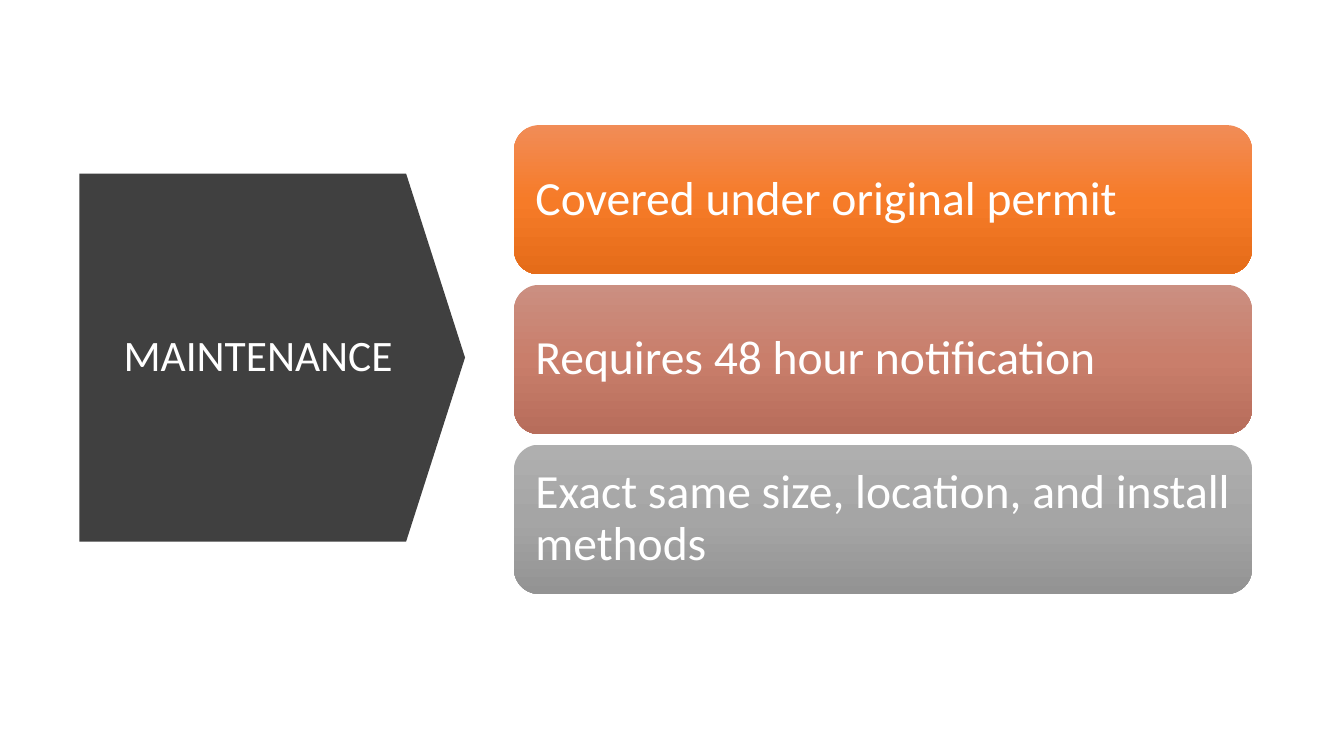
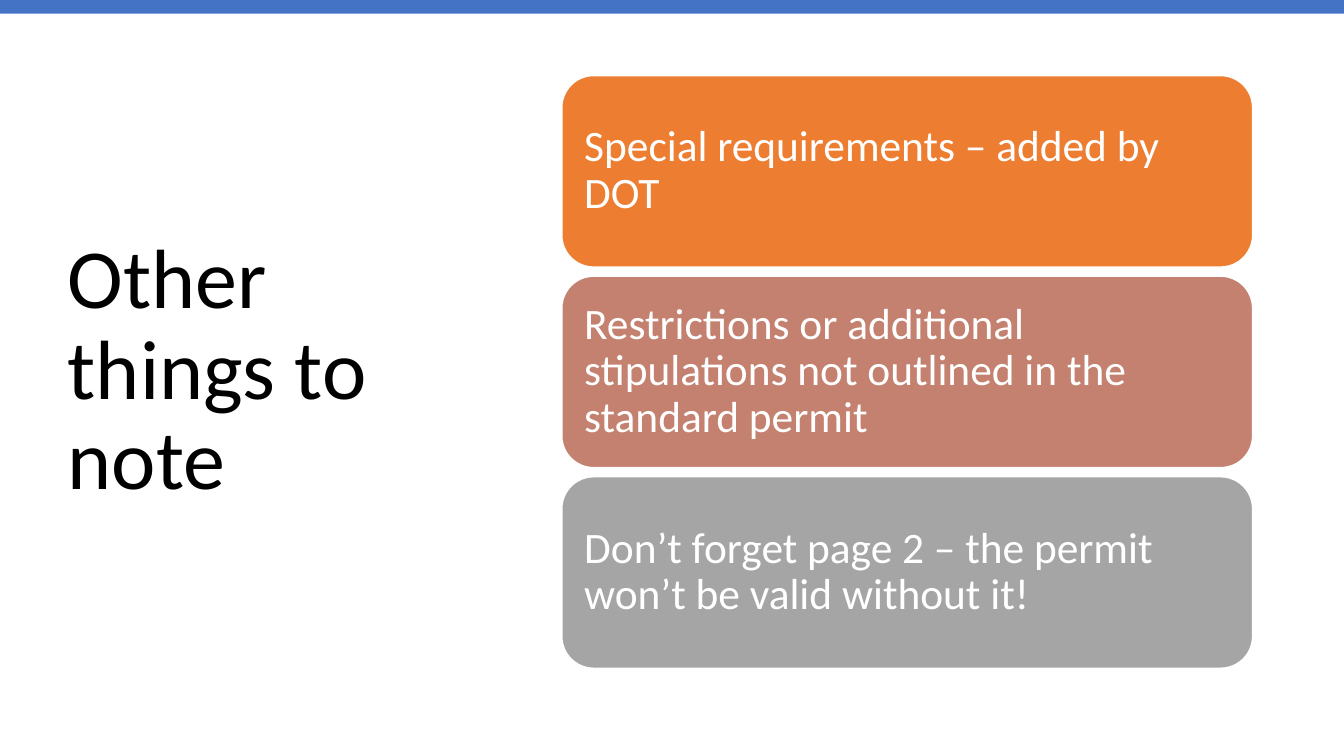
from lxml.etree import SubElement
from pptx import Presentation
from pptx.dml.color import RGBColor
from pptx.enum.shapes import MSO_SHAPE as Preset
from pptx.enum.text import MSO_ANCHOR as Anchor, MSO_AUTO_SIZE as AutoSize, PP_ALIGN as Align
from pptx.oxml.ns import qn
from pptx.util import Inches, Pt

TITLE_ONLY = 5


def color(value):
    return RGBColor.from_string(value)


class Deck:
    font = "Calibri"
    white = "FFFFFF"
    black = "000000"
    dark = "404040"
    blue = "4472C4"
    solid_fills = ["ED7D31", "C48170", "A5A5A5"]
    gradient_fills = [
        ["F18C57", "F67B28", "E56C19"],
        ["CB8F81", "C97E6B", "B76D5B"],
        ["AFAFAF", "A5A5A5", "939393"],
    ]

    def __init__(self):
        self.presentation = Presentation()
        self.presentation.slide_width = Inches(13.33)
        self.presentation.slide_height = Inches(7.5)
        self.slide = None

    def new_slide(self):
        layout = self.presentation.slide_layouts[TITLE_ONLY]
        self.slide = self.presentation.slides.add_slide(layout)

    def box(self, left, top, width, height):
        column = self.presentation.slide_width / 100
        row = self.presentation.slide_height / 100
        return [round(n) for n in (left * column, top * row, width * column, height * row)]

    def label(self, shape, text, size, ink, align=Align.LEFT, margin=0.1):
        frame = shape.text_frame
        frame.text = text
        frame.word_wrap = True
        frame.auto_size = AutoSize.NONE
        frame.vertical_anchor = Anchor.MIDDLE
        frame.margin_left = frame.margin_right = Inches(margin)
        frame.margin_top = frame.margin_bottom = Inches(margin)
        paragraph = frame.paragraphs[0]
        paragraph.alignment = align
        paragraph.line_spacing = 0.9
        font = paragraph.runs[0].font
        font.name = self.font
        font.size = Pt(size)
        font.color.rgb = color(ink)

    def title(self, text, area, size, ink, align=Align.LEFT):
        title = self.slide.shapes.title
        title.left, title.top, title.width, title.height = self.box(*area)
        self.label(title, text, size, ink, align)
        title.element.getparent().append(title.element)

    def shape(self, preset, area, fill, line=None):
        shape = self.slide.shapes.add_shape(preset, *self.box(*area))
        shape.shadow.inherit = False
        if isinstance(fill, list):
            self.gradient(shape, fill)
        else:
            shape.fill.solid()
            shape.fill.fore_color.rgb = color(fill)
        if line:
            shape.line.color.rgb = color(line)
            shape.line.width = Pt(1)
        else:
            shape.line.fill.background()
        return shape

    def gradient(self, shape, values):
        shape.fill.gradient()
        shape.fill.gradient_angle = 270
        stops = shape.element.spPr.find(qn("a:gradFill")).find(qn("a:gsLst"))
        for stop in list(stops):
            stops.remove(stop)
        for index, value in enumerate(values):
            position = index * 100000 // (len(values) - 1)
            stop = SubElement(stops, qn("a:gs"), pos=str(position))
            SubElement(stop, qn("a:srgbClr"), val=value)

    def cards(self, texts, area, gap, fills, size, margin, line=None):
        left, top, width, total = area
        height = (total - gap * (len(texts) - 1)) / len(texts)
        for index, (text, fill) in enumerate(zip(texts, fills)):
            place = (left, top + index * (height + gap), width, height)
            card = self.shape(Preset.ROUNDED_RECTANGLE, place, fill, line)
            self.label(card, text, size, self.white, margin=margin)

    def arrow(self, area, head):
        arrow = self.shape(Preset.PENTAGON, area, self.dark)
        arrow.adjustments[0] = head

    def top_band(self):
        self.shape(Preset.RECTANGLE, (0, 0, 100, 1.8), self.blue)


def maintenance(deck):
    deck.new_slide()
    deck.arrow((5.9, 22.95, 28.7, 48.7), 0.16)
    deck.title("MAINTENANCE", (8.4, 28.7, 21.6, 37.2), 31, deck.white, Align.CENTER)
    deck.cards(
        [
            "Covered under original permit",
            "Requires 48 hour notification",
            "Exact same size, location, and install methods",
        ],
        (38.25, 16.55, 54.9, 62), 1.4, deck.gradient_fills, 34, 0.14,
    )


def other_things(deck):
    deck.new_slide()
    deck.title("Other things to note", (4.3, 9.05, 31.2, 80.3), 60, deck.black)
    deck.top_band()
    deck.cards(
        [
            "Special requirements – added by DOT",
            "Restrictions or additional stipulations not outlined in the standard permit",
            "Don’t forget page 2 – the permit won’t be valid without it!",
        ],
        (41.8, 10, 51.4, 78.4), 1.2, deck.solid_fills, 31, 0.13, deck.white,
    )


def main():
    deck = Deck()
    maintenance(deck)
    other_things(deck)
    deck.presentation.save("out.pptx")


if __name__ == "__main__":
    main()
